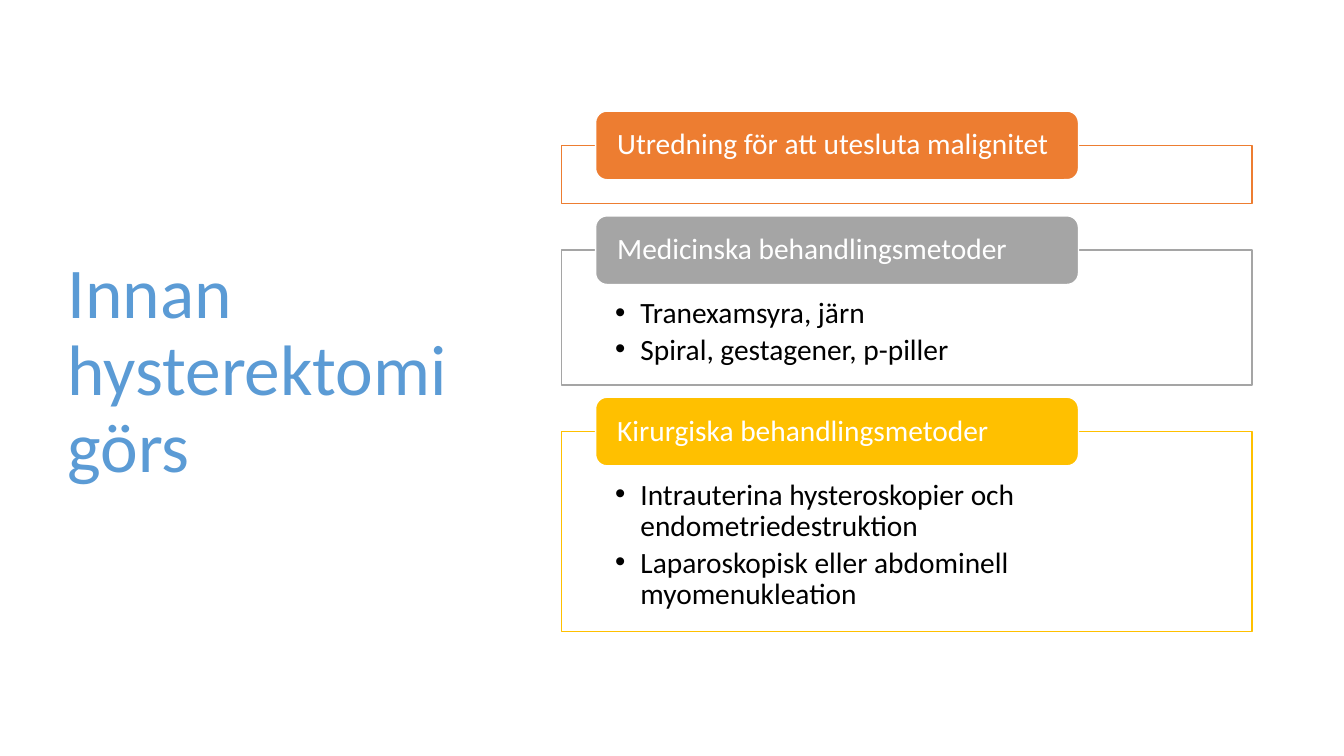
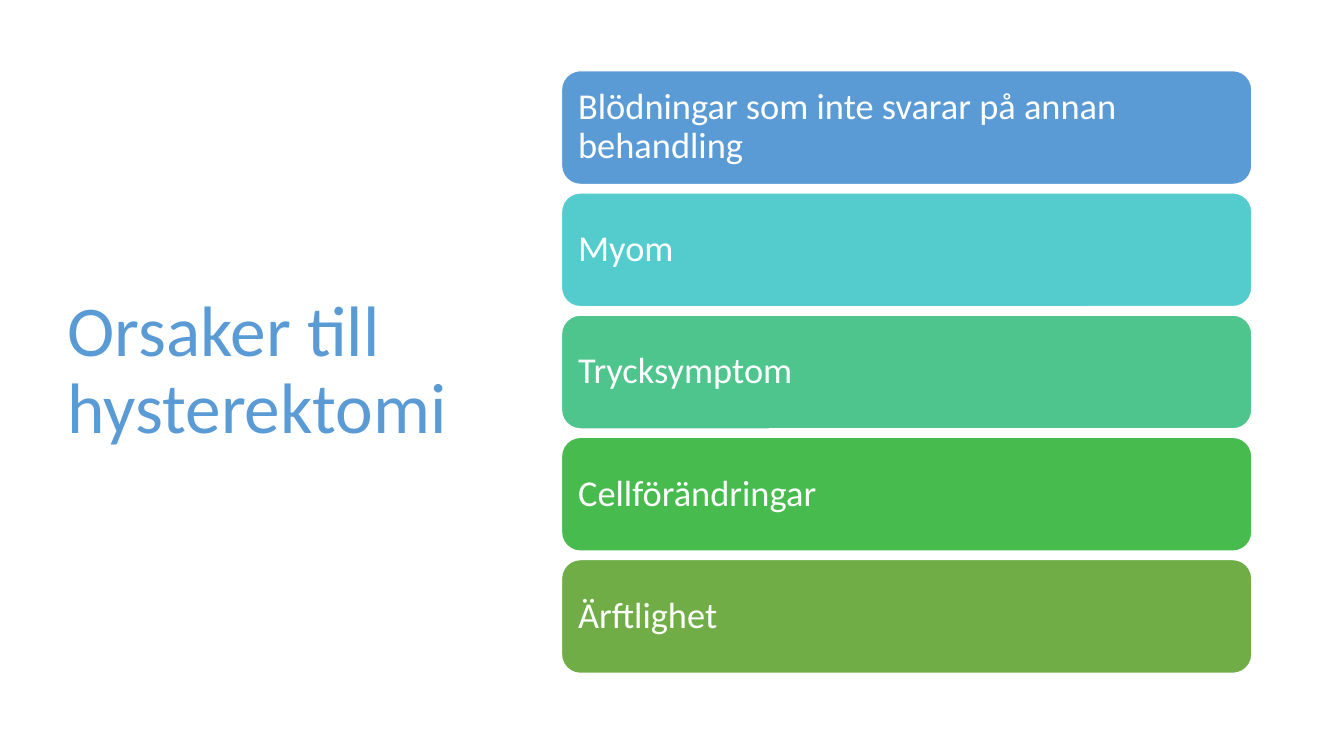
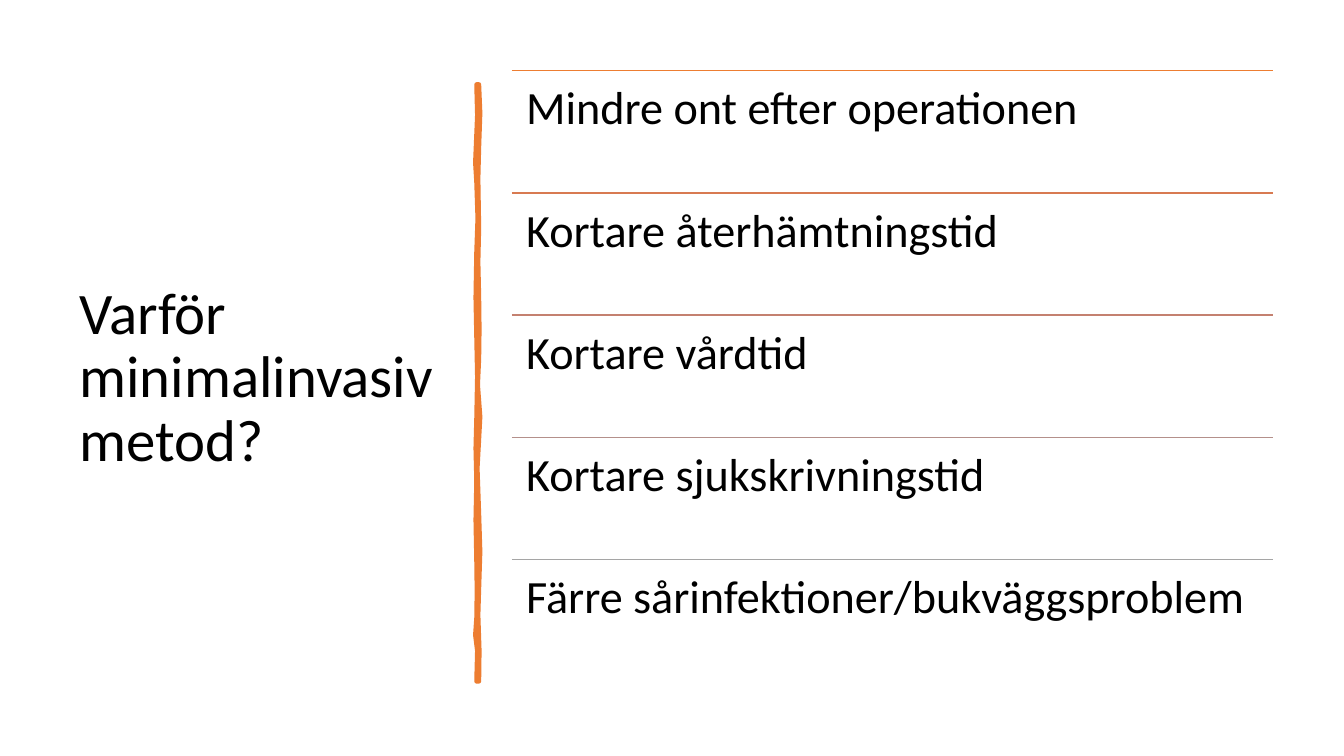
from dataclasses import dataclass

from lxml import etree
from pptx import Presentation, util as u
from pptx.dml.color import RGBColor
from pptx.enum import shapes, text
from pptx.oxml.ns import qn


@dataclass(frozen=True)
class Theme:
    font: str = "Calibri"
    white: str = "FFFFFF"
    black: str = "000000"
    blue: str = "5B9BD5"
    orange: str = "ED7D31"
    grey: str = "A5A5A5"
    gold: str = "FFC000"
    bars: tuple = ("5B9BD5", "54CCCD", "4DC58D", "48BB4F", "70AD47")
    rules: tuple = ("ED7D31", "D87A51", "C48170", "B4908B", "A5A5A5")
    title_size: int = 51
    small_title_size: int = 42
    row_size: int = 33
    bar_size: int = 26
    panel_size: int = 21


THEME = Theme()
TITLE_BOX = (1.45, 1.73, 10.57, 15.29)
NARROW_TITLE_BOX = (1.75, 1.78, 9.5, 15.52)
COLUMN_LEFT, COLUMN_WIDTH = 14.15, 17.4
LIST_TOP, LIST_PITCH = 1.78, 3.08

# Edges of the hand-drawn bar, in cm: right one downwards, left one upwards
BAR_OUTLINE = (
    (12.07, 2.13), (12.1, 2.85), (12.07, 3.71), (12.05, 4.5), (12.07, 5.74),
    (12.05, 6.6), (12.07, 7.47), (12.08, 8.3), (12.07, 9.04), (12.04, 9.7),
    (12.1, 10.5), (12.07, 11.07), (12.03, 11.8), (12.07, 12.95), (12.1, 13.9),
    (12.07, 14.83), (12.05, 15.5), (12.08, 16.4), (12.07, 17.17),
    (12.01, 17.17), (12.03, 16.4), (11.98, 16), (12.01, 15.57), (12.02, 14.9),
    (12.01, 14.15), (11.99, 13.1), (12.01, 12.12), (11.99, 11.3),
    (12.01, 10.54), (12.03, 9.5), (12.01, 8.51), (11.99, 7.5), (12.01, 6.35),
    (12.04, 5.5), (12.01, 4.6), (11.98, 4.1), (12.03, 2.9), (12.01, 2.13),
)


def cm(*lengths):
    return [u.Cm(length) for length in lengths]


def write(shape, *lines, size, color, anchor=text.MSO_ANCHOR.MIDDLE,
          insets=(0.25, 0.13, 0.25, 0.13), bullets=False):
    """Fill a shape with one paragraph per line; insets are in cm."""
    frame = shape.text_frame
    frame.word_wrap = True
    frame.auto_size = text.MSO_AUTO_SIZE.NONE
    frame.vertical_anchor = anchor
    (frame.margin_left, frame.margin_top,
     frame.margin_right, frame.margin_bottom) = cm(*insets)
    for index, line in enumerate(lines):
        paragraph = frame.add_paragraph() if index else frame.paragraphs[0]
        paragraph.alignment = text.PP_ALIGN.LEFT
        paragraph.line_spacing = 0.9
        run = paragraph.add_run()
        run.text = line
        run.font.name = THEME.font
        run.font.size = u.Pt(size)
        run.font.color.rgb = RGBColor.from_string(color)
        if bullets:
            paragraph.space_after = u.Pt(3.2)
            add_bullet(paragraph)


def add_bullet(paragraph, indent=0.64):
    properties = paragraph._p.get_or_add_pPr()
    properties.set("marL", str(u.Cm(indent)))
    properties.set("indent", str(-u.Cm(indent)))
    font = etree.SubElement(properties, qn("a:buFont"))
    font.set("typeface", "Arial")
    etree.SubElement(properties, qn("a:buChar")).set("char", "•")


def paint(shape, fill, line, width=1):
    shape.shadow.inherit = False
    shape.fill.solid()
    shape.fill.fore_color.rgb = RGBColor.from_string(fill)
    shape.line.color.rgb = RGBColor.from_string(line)
    shape.line.width = u.Pt(width)


class Deck:
    def __init__(self):
        self.presentation = Presentation()
        self.presentation.slide_width, self.presentation.slide_height = cm(33.87, 19.05)
        self.slide = None

    def new_slide(self, title, box=TITLE_BOX, size=THEME.title_size, color=THEME.blue):
        self.slide = self.presentation.slides.add_slide(self.presentation.slide_layouts[5])
        heading = self.slide.shapes.title
        heading.left, heading.top, heading.width, heading.height = cm(*box)
        write(heading, title, size=size, color=color)

    def block(self, kind, box, fill, line):
        block = self.slide.shapes.add_shape(kind, *cm(*box))
        paint(block, fill, line)
        return block

    def panel(self, top, height, color, heading, points):
        """Framed list with a coloured heading tab across its top edge."""
        frame = self.block(shapes.MSO_SHAPE.RECTANGLE,
                           (COLUMN_LEFT, top, COLUMN_WIDTH, height), THEME.white, color)
        if points:
            write(frame, *points, size=THEME.panel_size, color=THEME.black, bullets=True,
                  anchor=text.MSO_ANCHOR.TOP, insets=(1.35, 1.22, 1.35, 0.41))
        tab = self.block(shapes.MSO_SHAPE.ROUNDED_RECTANGLE,
                         (15.01, top - 0.86, 12.17, 1.73), color, THEME.white)
        write(tab, heading, size=THEME.panel_size, color=THEME.white,
              insets=(0.46, 0, 0.46, 0))

    def bar(self, top, color, label):
        bar = self.block(shapes.MSO_SHAPE.ROUNDED_RECTANGLE,
                         (COLUMN_LEFT, top, COLUMN_WIDTH, 2.87), color, THEME.white)
        write(bar, label, size=THEME.bar_size, color=THEME.white, insets=(0.28,) * 4)

    def ruled_row(self, top, color, label, left=12.9, width=19.18):
        rule = self.slide.shapes.add_connector(
            shapes.MSO_CONNECTOR.STRAIGHT, *cm(left, top, left + width, top))
        rule.line.color.rgb = RGBColor.from_string(color)
        rule.line.width = u.Pt(1)
        etree.SubElement(rule._element.spPr, qn("a:effectLst"))
        row = self.slide.shapes.add_textbox(*cm(left, top, width, LIST_PITCH))
        write(row, label, size=THEME.row_size, color=THEME.black,
              anchor=text.MSO_ANCHOR.TOP, insets=(0.36,) * 4)

    def drawn_bar(self, outline, color):
        start, *others = [cm(*point) for point in outline]
        builder = self.slide.shapes.build_freeform(*start)
        builder.add_line_segments(others, close=True)
        paint(builder.convert_to_shape(), color, color, width=3.25)


def main():
    deck = Deck()

    deck.new_slide("Innan hysterektomi görs")
    panels = (
        (1.47, THEME.orange, "Utredning för att utesluta malignitet", ()),
        (3.4, THEME.grey, "Medicinska behandlingsmetoder",
         ("Tranexamsyra, järn", "Spiral, gestagener, p-piller")),
        (5.05, THEME.gold, "Kirurgiska behandlingsmetoder",
         ("Intrauterina hysteroskopier och endometriedestruktion",
          "Laparoskopisk eller abdominell myomenukleation")),
    )
    top = 3.66
    for height, color, heading, points in panels:
        deck.panel(top, height, color, heading, points)
        top += height + 1.17

    deck.new_slide("Orsaker till hysterektomi")
    reasons = ("Blödningar som inte svarar på annan behandling", "Myom",
               "Trycksymptom", "Cellförändringar", "Ärftlighet")
    for index, (color, reason) in enumerate(zip(THEME.bars, reasons)):
        deck.bar(LIST_TOP + index * LIST_PITCH, color, reason)

    deck.new_slide("Varför minimalinvasiv metod?", box=NARROW_TITLE_BOX,
                   size=THEME.small_title_size, color=THEME.black)
    deck.drawn_bar(BAR_OUTLINE, THEME.orange)
    benefits = ("Mindre ont efter operationen", "Kortare återhämtningstid",
                "Kortare vårdtid", "Kortare sjukskrivningstid",
                "Färre sårinfektioner/bukväggsproblem")
    for index, (color, benefit) in enumerate(zip(THEME.rules, benefits)):
        deck.ruled_row(LIST_TOP + index * LIST_PITCH, color, benefit)

    deck.presentation.save("out.pptx")


if __name__ == "__main__":
    main()
